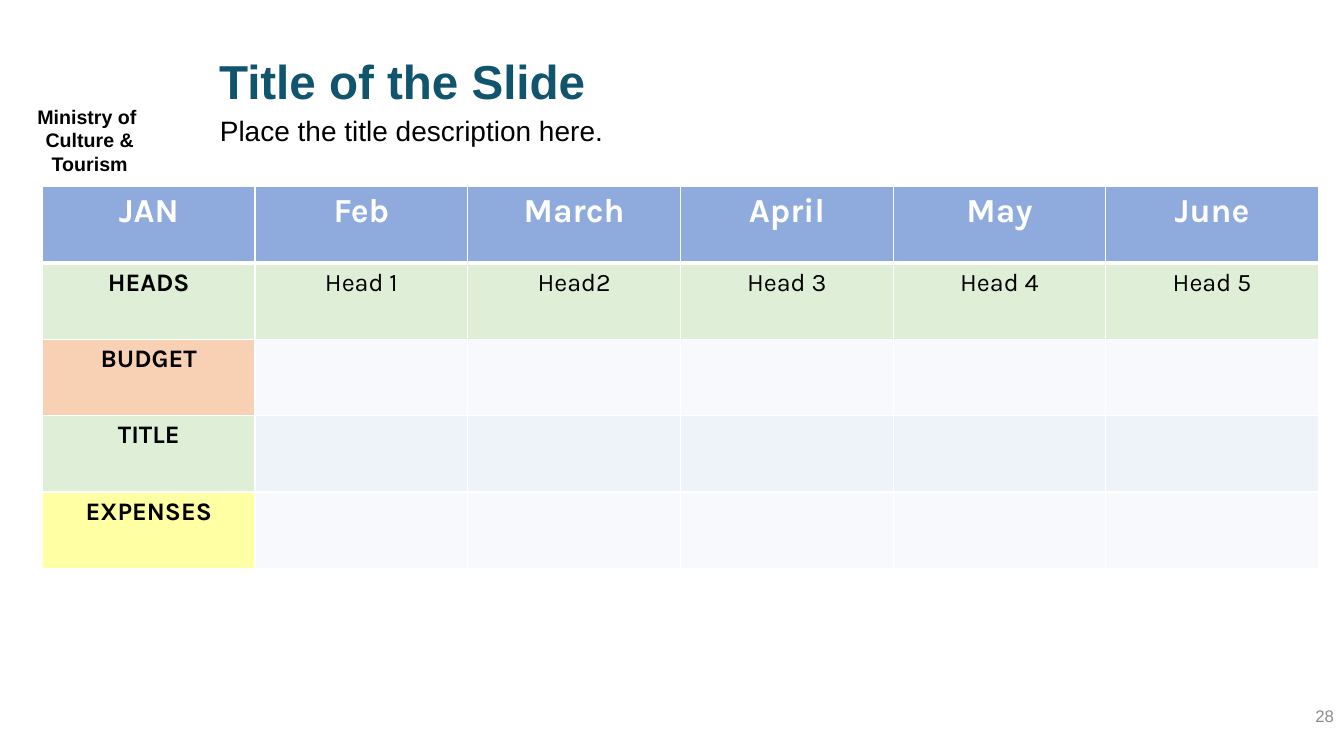
import pptx
import pptx.dml.color
import pptx.enum.text
import pptx.oxml.ns
import pptx.util
from lxml import etree

Pt = pptx.util.Pt
RGBColor = pptx.dml.color.RGBColor
ALIGN = pptx.enum.text.PP_ALIGN
ANCHOR = pptx.enum.text.MSO_ANCHOR
qn = pptx.oxml.ns.qn

WHITE = RGBColor(0xFF, 0xFF, 0xFF)
BLACK = RGBColor(0x00, 0x00, 0x00)
GREY = RGBColor(0x8C, 0x8C, 0x8C)
TEAL = RGBColor(0x10, 0x54, 0x6D)
BLUE = RGBColor(0x8F, 0xAA, 0xDC)
GREEN = RGBColor(0xA9, 0xD1, 0x8E)
ORANGE = RGBColor(0xED, 0x7D, 0x31)
YELLOW = RGBColor(0xFF, 0xFF, 0x00)
PALE = RGBColor(0xEA, 0xEF, 0xF7)
PALE_BLUE = RGBColor(0xD2, 0xDE, 0xEF)

COLUMN_WIDTH, ROW_HEIGHT = 151.92, 54.58
TINT_ALPHA = 36
MONTHS = ["JAN", "Feb", "March", "April", "May", "June"]
HEADS = ["Head 1", "Head2", "Head 3", "Head 4", "Head 5"]
# Label, label fill, fill of the other cells, their texts
BODY_ROWS = [
    ("HEADS", GREEN, GREEN, HEADS),
    ("BUDGET", ORANGE, PALE, [""] * 5),
    ("TITLE", GREEN, PALE_BLUE, [""] * 5),
    ("EXPENSES", YELLOW, PALE, [""] * 5),
]


def write_text(frame, text, size, color=BLACK, font="Arial", bold=False,
               align=ALIGN.LEFT, line_spacing=None):
    """Fill a text frame, one paragraph per line of text."""
    for index, line in enumerate(text.split("\n")):
        para = frame.paragraphs[0] if index == 0 else frame.add_paragraph()
        para.alignment = align
        para.space_before = Pt(0)
        if line_spacing:
            para.line_spacing = Pt(line_spacing)
        span = para.add_run()
        span.text = line
        span.font.size = Pt(size)
        span.font.name = font
        span.font.bold = bold
        span.font.color.rgb = color


def set_frame(frame, anchor=ANCHOR.TOP, inset=None):
    frame.word_wrap = True
    frame.auto_size = pptx.enum.text.MSO_AUTO_SIZE.NONE
    frame.vertical_anchor = anchor
    if inset is not None:
        frame.margin_left = frame.margin_right = Pt(inset)
        frame.margin_top = frame.margin_bottom = Pt(inset)


def add_text(page, left, top, width, height, text, anchor=ANCHOR.TOP,
             inset=None, **text_format):
    box = page.shapes.add_textbox(Pt(left), Pt(top), Pt(width), Pt(height))
    set_frame(box.text_frame, anchor, inset)
    write_text(box.text_frame, text, **text_format)


def add_title(page, left, top, width, height, text, **text_format):
    title = page.shapes.title
    title.left, title.top = Pt(left), Pt(top)
    title.width, title.height = Pt(width), Pt(height)
    set_frame(title.text_frame, inset=0)
    write_text(title.text_frame, text, **text_format)


def style_cell(cell, color, alpha=100, top=1, bottom=1):
    """Give a cell white borders and a fill, translucent below 100."""
    properties = cell._tc.get_or_add_tcPr()
    for side, width in (("L", 1), ("R", 1), ("T", top), ("B", bottom)):
        line = etree.SubElement(properties, qn("a:ln" + side), w=str(Pt(width)))
        paint = etree.SubElement(line, qn("a:solidFill"))
        etree.SubElement(paint, qn("a:srgbClr"), val=str(WHITE))
    cell.fill.solid()
    cell.fill.fore_color.rgb = color
    if alpha < 100:
        swatch = properties.find(qn("a:solidFill")).find(qn("a:srgbClr"))
        etree.SubElement(swatch, qn("a:alpha"), val=str(alpha * 1000))


def add_budget_table(page, left, top):
    rows, columns = len(BODY_ROWS) + 1, len(MONTHS)
    table = page.shapes.add_table(
        rows, columns, Pt(left), Pt(top),
        Pt(COLUMN_WIDTH * columns), Pt(ROW_HEIGHT * rows)).table
    for column in table.columns:
        column.width = Pt(COLUMN_WIDTH)
    for row in table.rows:
        row.height = Pt(ROW_HEIGHT)

    # Month header
    for index, month in enumerate(MONTHS):
        cell = table.cell(0, index)
        style_cell(cell, BLUE, bottom=3)
        write_text(cell.text_frame, month, size=24, color=WHITE, font="Karla",
                   bold=True, align=ALIGN.CENTER)

    # Labelled rows
    for row, (label, label_fill, fill, texts) in enumerate(BODY_ROWS, 1):
        for index, text in enumerate([label] + texts):
            cell = table.cell(row, index)
            style_cell(cell, fill if index else label_fill, TINT_ALPHA,
                       top=3 if row == 1 else 1)
            if text:
                write_text(cell.text_frame, text, size=18, font="Karla",
                           bold=index == 0, align=ALIGN.CENTER)


def main():
    deck = pptx.Presentation()
    deck.slide_width, deck.slide_height = Pt(960), Pt(540)
    page = deck.slides.add_slide(deck.slide_layouts[5])

    # Ministry name
    add_text(page, 0, 71.3, 128.2, 41, "Ministry of \nCulture & Tourism",
             size=14, bold=True, align=ALIGN.CENTER)
    add_budget_table(page, 30.3, 133.2)
    # Slide number
    add_text(page, 744, 496.8, 216, 28.8, "28", anchor=ANCHOR.MIDDLE,
             size=12, color=GREY, align=ALIGN.RIGHT)
    # Title and description
    add_text(page, 157, 88.6, 608.4, 49, "Place the title description here.",
             inset=0, size=20, line_spacing=16.5)
    add_title(page, 156.5, 38.2, 603.4, 38.2, "Title of the Slide",
              size=34, color=TEAL, bold=True, line_spacing=40)

    deck.save("out.pptx")


if __name__ == "__main__":
    main()
